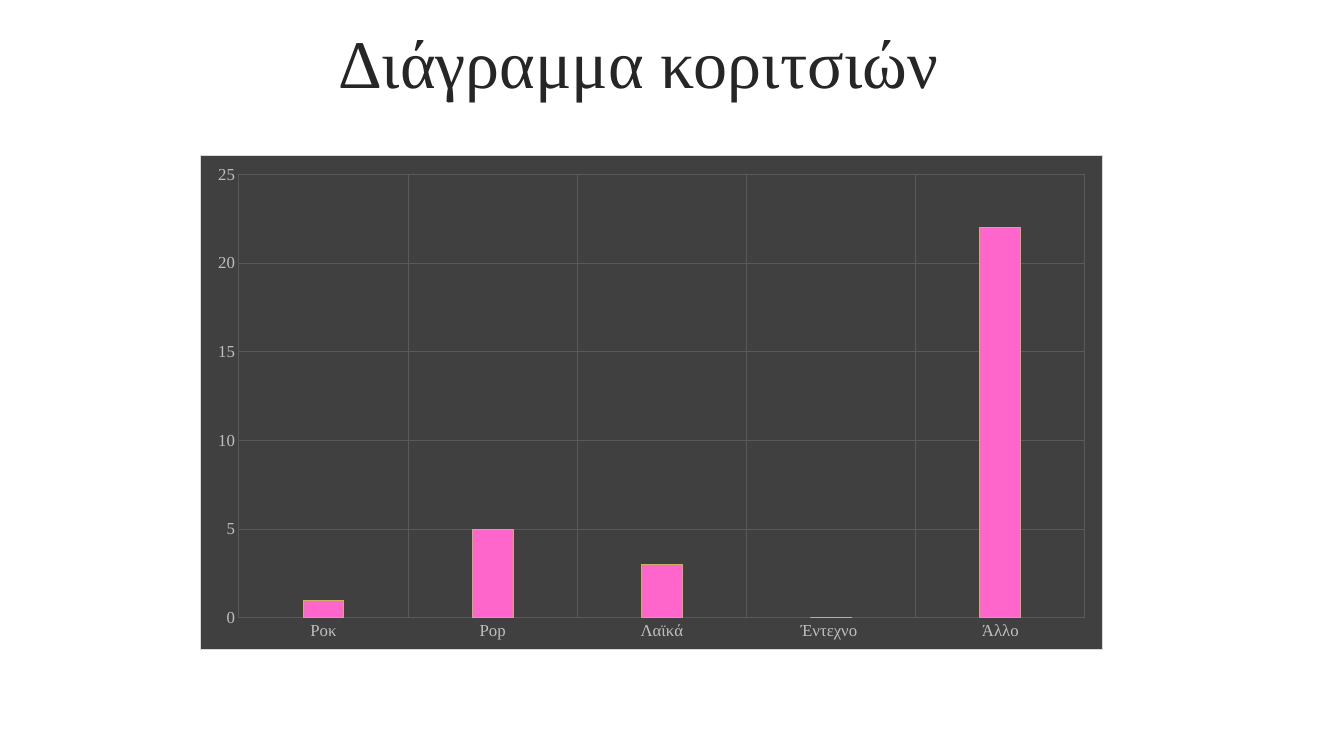
from lxml import etree
from pptx import Presentation
from pptx import util as u
from pptx.chart.data import CategoryChartData
from pptx.dml.color import RGBColor
from pptx.enum import chart as ch, text
from pptx.oxml import parse_xml
from pptx.oxml.ns import nsdecls


def rgb(code):
    return RGBColor.from_string(code)


class Deck:
    face = "Times New Roman"
    ink, label = "262626", "BFBFBF"
    panel, edge, grid = "404040", "D9D9D9", "595959"
    bar, rim = "FF66CC", "CBAF62"
    thin = u.Pt(0.75)

    def __init__(self, wide, high):
        self.prs = Presentation()
        self.prs.slide_width, self.prs.slide_height = u.Cm(wide), u.Cm(high)
        self.slide = self.prs.slides.add_slide(self.prs.slide_layouts[5])

    def font(self, font, size, color):
        font.name, font.size = self.face, u.Pt(size)
        font.color.rgb = rgb(color)

    def line(self, line, color):
        line.color.rgb = rgb(color)
        line.width = self.thin

    def title(self, words, x, y, w, h):
        box = self.slide.shapes.title
        box.left, box.top, box.width, box.height = map(u.Cm, (x, y, w, h))
        frame = box.text_frame
        frame.text = words
        frame.word_wrap = True
        frame.auto_size = text.MSO_AUTO_SIZE.NONE
        frame.vertical_anchor = text.MSO_ANCHOR.BOTTOM
        para = frame.paragraphs[0]
        para.alignment = text.PP_ALIGN.CENTER
        self.font(para.font, 48.6, self.ink)

    def columns(self, name, values, x, y, w, h):
        data = CategoryChartData()
        data.categories = list(values)
        data.add_series(name, list(values.values()))
        chart = self.slide.shapes.add_chart(
            ch.XL_CHART_TYPE.COLUMN_CLUSTERED, *map(u.Cm, (x, y, w, h)), data).chart
        chart.has_legend = chart.has_title = False
        self.font(chart.font, 10, "000000")
        self.back(chart)

        # Axes
        for axis in (chart.category_axis, chart.value_axis):
            axis.has_major_gridlines = True
            self.line(axis.major_gridlines.format.line, self.grid)
            axis.major_tick_mark = axis.minor_tick_mark = ch.XL_TICK_MARK.NONE
            axis.format.line.fill.background()
            self.font(axis.tick_labels.font, 12, self.label)
        axis.minimum_scale, axis.maximum_scale, axis.major_unit = 0, 25, 5

        # Bars
        plot = chart.plots[0]
        plot.gap_width, plot.overlap = 315, -40
        plot.vary_by_categories = False
        form = plot.series[0].format
        form.fill.solid()
        form.fill.fore_color.rgb = rgb(self.bar)
        self.line(form.line, self.rim)

    def back(self, chart):
        # Panel behind the whole chart
        fill = '<a:solidFill><a:srgbClr val="%s"/></a:solidFill>'
        area = parse_xml(
            f'<c:spPr {nsdecls("c", "a")}>{fill % self.panel}'
            f'<a:ln w="{self.thin}">{fill % self.edge}</a:ln></c:spPr>')
        root = chart.element
        root.find(etree.QName(root.nsmap["c"], "chart").text).addnext(area)


def main():
    deck = Deck(33.87, 19.05)
    deck.title("Διάγραμμα κοριτσιών ", 3.76, 0.64, 25.07, 2.06)
    votes = {"Ροκ": 1, "Pop": 5, "Λαϊκά": 3, "Έντεχνο ": 0, "Άλλο": 22}
    deck.columns("Series 1", votes, 5.03, 3.91, 22.78, 12.47)
    deck.prs.save("out.pptx")


if __name__ == "__main__":
    main()
